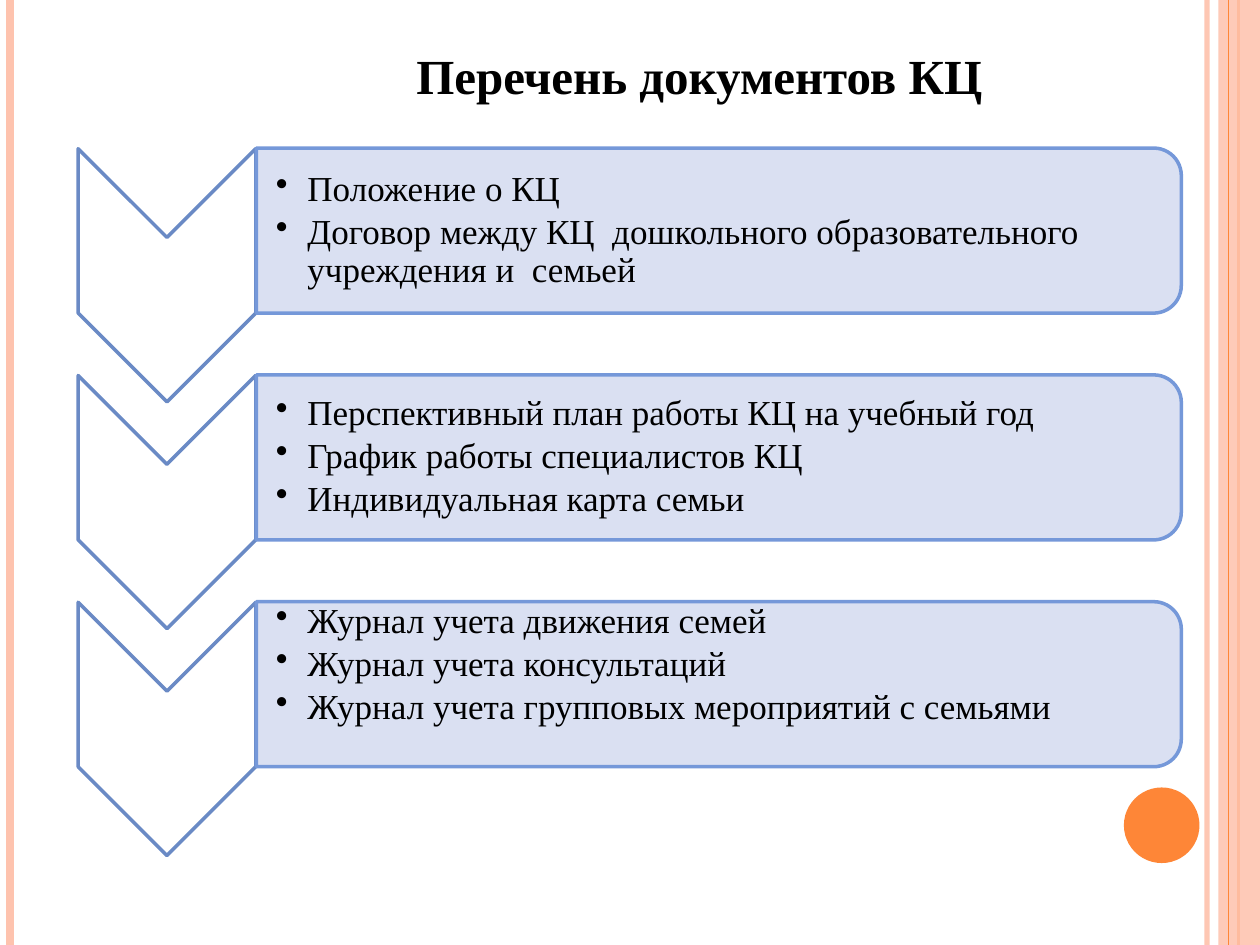
from dataclasses import dataclass

from lxml import etree
from pptx import Presentation
from pptx import util as u
from pptx.dml.color import RGBColor
from pptx.enum import shapes, text
from pptx.oxml import ns


@dataclass(frozen=True)
class Theme:
    """Colours, font and type sizes of the slide."""
    font: str = "Times New Roman"
    title_size: int = 28
    body_size: int = 20
    ink: str = "000000"
    white: str = "FFFFFF"
    peach: str = "FEC3AE"
    orange: str = "FE8637"
    chevron_edge: str = "6A8AC5"
    panel: str = "D6DDF1"
    panel_edge: str = "7598D9"


THEME = Theme()
ROW_STEP = 1.8
STRIPES = [
    (9.58, THEME.peach, 3, 93),
    (0.08, THEME.peach, 4.5, 100),
    (9.83, THEME.orange, 1.5, 100),
]
DOCUMENT_GROUPS = [
    (["Положение о КЦ",
      "Договор между КЦ  дошкольного образовательного учреждения и  семьей"], 0.01),
    (["Перспективный план работы КЦ на учебный год",
      "График работы специалистов КЦ",
      "Индивидуальная карта семьи"], 0.01),
    (["Журнал учета движения семей",
      "Журнал учета консультаций",
      "Журнал учета групповых мероприятий с семьями"], 0.31),
]


def set_alpha(properties, percent):
    """Make the first colour under the given properties partly transparent."""
    if percent < 100:
        colour = next(properties.iter(ns.qn("a:srgbClr")))
        etree.SubElement(colour, ns.qn("a:alpha"), val=str(percent * 1000))


def add_stripe(slide, x, colour, width, alpha=100):
    """Draw a full-height vertical stripe."""
    stripe = slide.shapes.add_connector(
        shapes.MSO_CONNECTOR.STRAIGHT, u.Inches(x), 0, u.Inches(x), u.Inches(7.5))
    stripe.line.color.rgb = RGBColor.from_string(colour)
    stripe.line.width = u.Pt(width)
    properties = stripe._element.spPr
    set_alpha(properties, alpha)
    etree.SubElement(properties, ns.qn("a:effectLst"))


def add_figure(slide, preset, box, fill, edge=None, alpha=100, rotation=0):
    """Draw a filled preset shape with an optional outline."""
    figure = slide.shapes.add_shape(preset, *map(u.Inches, box))
    figure.shadow.inherit = False
    figure.rotation = rotation
    figure.fill.solid()
    figure.fill.fore_color.rgb = RGBColor.from_string(fill)
    set_alpha(figure._element.spPr, alpha)
    if edge:
        figure.line.color.rgb = RGBColor.from_string(edge)
        figure.line.width = u.Pt(2)
    else:
        figure.line.fill.background()


def add_bullet(paragraph):
    """Give a paragraph a hanging round bullet."""
    properties = paragraph._p.get_or_add_pPr()
    properties.set("marL", str(u.Inches(0.25)))
    properties.set("indent", str(-u.Inches(0.25)))
    etree.SubElement(properties, ns.qn("a:buChar"), char="•")


def add_text(slide, box, lines, size, bold=False, align=text.PP_ALIGN.LEFT,
             anchor=text.MSO_ANCHOR.TOP, insets=(0.1, 0.05, 0.1, 0.05), bullets=False):
    """Write lines as paragraphs of a wrapped text box."""
    frame = slide.shapes.add_textbox(*map(u.Inches, box)).text_frame
    frame.word_wrap = True
    frame.vertical_anchor = anchor
    (frame.margin_left, frame.margin_top,
     frame.margin_right, frame.margin_bottom) = map(u.Inches, insets)
    for index, line in enumerate(lines):
        paragraph = frame.add_paragraph() if index else frame.paragraphs[0]
        paragraph.alignment = align
        if bullets:
            paragraph.level = 1
            paragraph.line_spacing = 0.9
            paragraph.space_after = u.Pt(3)
            add_bullet(paragraph)
        run = paragraph.add_run()
        run.text = line
        run.font.name = THEME.font
        run.font.size = u.Pt(size)
        run.font.bold = bold
        run.font.color.rgb = RGBColor.from_string(THEME.ink)


def add_document_group(slide, row, documents, bottom_inset):
    """Draw one chevron and its panel of documents."""
    offset = row * ROW_STEP
    add_figure(slide, shapes.MSO_SHAPE.CHEVRON, (0.32, 1.48 + offset, 2.01, 1.41),
               THEME.white, THEME.chevron_edge, rotation=90)
    add_figure(slide, shapes.MSO_SHAPE.ROUND_2_SAME_RECTANGLE,
               (5.05, -1.84 + offset, 1.31, 7.34),
               THEME.panel, THEME.panel_edge, alpha=90, rotation=90)
    add_text(slide, (2.03, 1.24 + offset, 7.28, 1.18), documents, THEME.body_size,
             anchor=text.MSO_ANCHOR.MIDDLE, insets=(0.16, 0.01, 0.01, bottom_inset),
             bullets=True)


def main():
    """Build and save the slide."""
    deck = Presentation()
    deck.slide_width, deck.slide_height = u.Inches(10), u.Inches(7.5)
    slide = deck.slides.add_slide(deck.slide_layouts[6])
    for stripe in STRIPES:
        add_stripe(slide, *stripe)
    add_figure(slide, shapes.MSO_SHAPE.RECTANGLE, (9.67, 0, 0.33, 7.5),
               THEME.peach, alpha=87)
    add_stripe(slide, 9.75, THEME.orange, 0.75)
    add_figure(slide, shapes.MSO_SHAPE.OVAL, (8.92, 6.25, 0.6, 0.6), THEME.orange)
    for row, (documents, bottom_inset) in enumerate(DOCUMENT_GROUPS):
        add_document_group(slide, row, documents, bottom_inset)
    add_text(slide, (2.11, 0.31, 6.88, 0.57), ["Перечень документов КЦ"],
             THEME.title_size, bold=True, align=text.PP_ALIGN.CENTER)
    deck.save("out.pptx")


if __name__ == "__main__":
    main()
